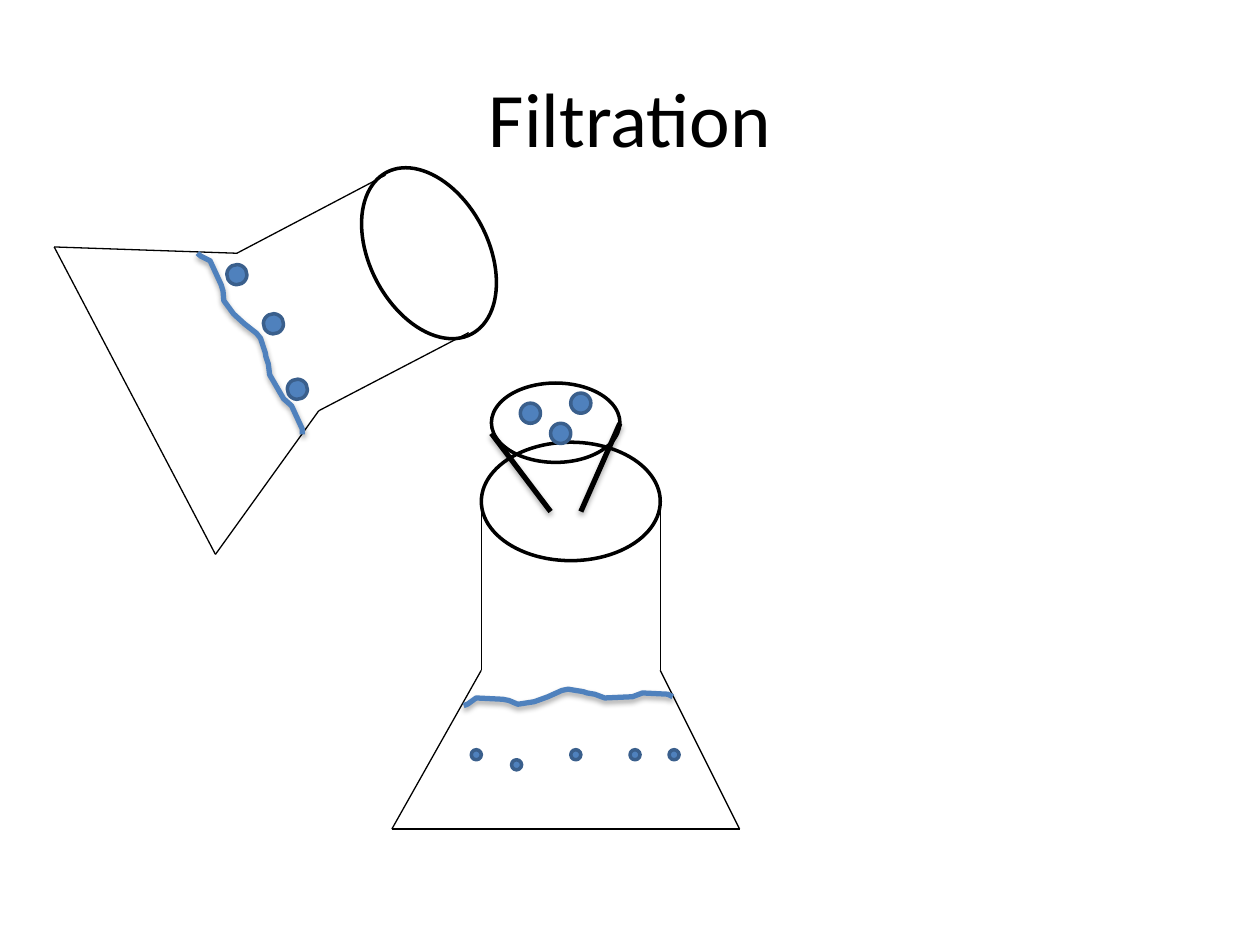
import itertools

import lxml.etree
import pptx
import pptx.dml.color
import pptx.enum.shapes
import pptx.enum.text
import pptx.oxml.ns
import pptx.util

Inches = pptx.util.Inches
qn = pptx.oxml.ns.qn

COLORS = {"ink": "000000", "liquid": "4F81BD", "rim": "3A5F8C"}
TILT = 62.4
WAVE = [
    (0, 0.13), (0.03, 0.12), (0.1, 0.07), (0.31, 0.08), (0.36, 0.09),
    (0.43, 0.12), (0.56, 0.1), (0.67, 0.06), (0.78, 0.01), (0.83, 0),
    (0.95, 0.02), (0.98, 0.03), (1.04, 0.04), (1.12, 0.07), (1.34, 0.06),
    (1.42, 0.03), (1.62, 0.04), (1.66, 0.06),
]


class Diagram:
    def __init__(self, slide):
        self.slide = slide
        self.shapes = slide.shapes
        self.title_font = {"name": "Calibri", "size": pptx.util.Pt(44)}
        self.title_frame = {
            "word_wrap": True,
            "vertical_anchor": pptx.enum.text.MSO_ANCHOR.MIDDLE,
        }
        self.shadow = {"blurRad": "40000", "dist": "23000", "dir": "5400000", "rotWithShape": "0"}

    def color(self, name):
        return pptx.dml.color.RGBColor.from_string(COLORS[name])

    def apply(self, target, values):
        for attribute, value in values.items():
            setattr(target, attribute, value)

    def stroke(self, element, color, width, shadowed=False):
        element.line.color.rgb = self.color(color)
        element.line.width = pptx.util.Pt(width)
        effects = lxml.etree.SubElement(element._element.spPr, qn("a:effectLst"))
        if shadowed:
            outer = lxml.etree.SubElement(effects, qn("a:outerShdw"), self.shadow)
            black = lxml.etree.SubElement(outer, qn("a:srgbClr"), val=COLORS["ink"])
            lxml.etree.SubElement(black, qn("a:alpha"), val="35000")

    def title(self, text, left, top, width, height):
        box = self.shapes.add_textbox(*map(Inches, (left, top, width, height)))
        self.apply(box.text_frame, self.title_frame)
        paragraph = box.text_frame.paragraphs[0]
        paragraph.text = text
        paragraph.alignment = pptx.enum.text.PP_ALIGN.CENTER
        self.apply(paragraph.font, self.title_font)
        paragraph.font.color.rgb = self.color("ink")

    def ellipse(self, left, top, width, height, rotation=0, fill=None, line="ink"):
        oval = self.shapes.add_shape(
            pptx.enum.shapes.MSO_SHAPE.OVAL, *map(Inches, (left, top, width, height)))
        oval.rotation = rotation
        if fill:
            oval.fill.solid()
            oval.fill.fore_color.rgb = self.color(fill)
        else:
            oval.fill.background()
        self.stroke(oval, line, 2)

    def line(self, start, end, width=0.75, shadowed=False):
        edge = self.shapes.add_connector(
            pptx.enum.shapes.MSO_CONNECTOR.STRAIGHT, *map(Inches, start + end))
        self.stroke(edge, "ink", width, shadowed)

    def liquid(self, left, top, rotation=0):
        points = [(Inches(left + x), Inches(top + y)) for x, y in WAVE]
        builder = self.shapes.build_freeform(*points[0])
        builder.add_line_segments(points[1:], close=False)
        surface = builder.convert_to_shape()
        surface.rotation = rotation
        surface.fill.background()
        self.stroke(surface, "liquid", 3, shadowed=True)

    def flask(self, mouth, outline, surface, rotation=0):
        self.ellipse(*mouth, rotation=rotation)
        for start, end in itertools.pairwise(outline):
            self.line(start, end)
        self.liquid(*surface, rotation=rotation)

    def particles(self, positions, size, rotation=0):
        for left, top in positions:
            self.ellipse(left, top, size, size, rotation, "liquid", "rim")


def main():
    presentation = pptx.Presentation()
    presentation.slide_width = Inches(10)
    presentation.slide_height = Inches(7.5)
    diagram = Diagram(presentation.slides.add_slide(presentation.slide_layouts[6]))

    diagram.title("Filtration", 0.5, 0.3, 9, 1.25)
    diagram.flask(
        mouth=(3.82, 3.51, 1.42, 0.94),
        outline=[(3.82, 3.99), (3.82, 5.32), (3.11, 6.58),
                 (5.87, 6.58), (5.24, 5.32), (5.24, 3.99)],
        surface=(3.68, 5.47))
    diagram.particles([(3.74, 5.95), (4.06, 6.03), (4.53, 5.95), (5, 5.95), (5.31, 5.95)], 0.08)
    diagram.particles([(4.37, 3.36), (4.53, 3.12), (4.13, 3.2)], 0.16)

    diagram.flask(
        mouth=(2.68, 1.54, 1.45, 0.94),
        outline=[(3.06, 1.39), (1.88, 2.01), (0.43, 1.96),
                 (1.71, 4.4), (2.53, 3.26), (3.72, 2.64)],
        surface=(1.18, 2.65),
        rotation=TILT)
    diagram.particles([(1.8, 2.1), (2.09, 2.49), (2.28, 3.01)], 0.16, TILT)

    diagram.line((4.37, 4.06), (3.9, 3.44), 3, shadowed=True)
    diagram.ellipse(3.9, 3.04, 1.02, 0.63)
    diagram.line((4.61, 4.06), (4.92, 3.36), 3, shadowed=True)

    presentation.save("out.pptx")


if __name__ == "__main__":
    main()
